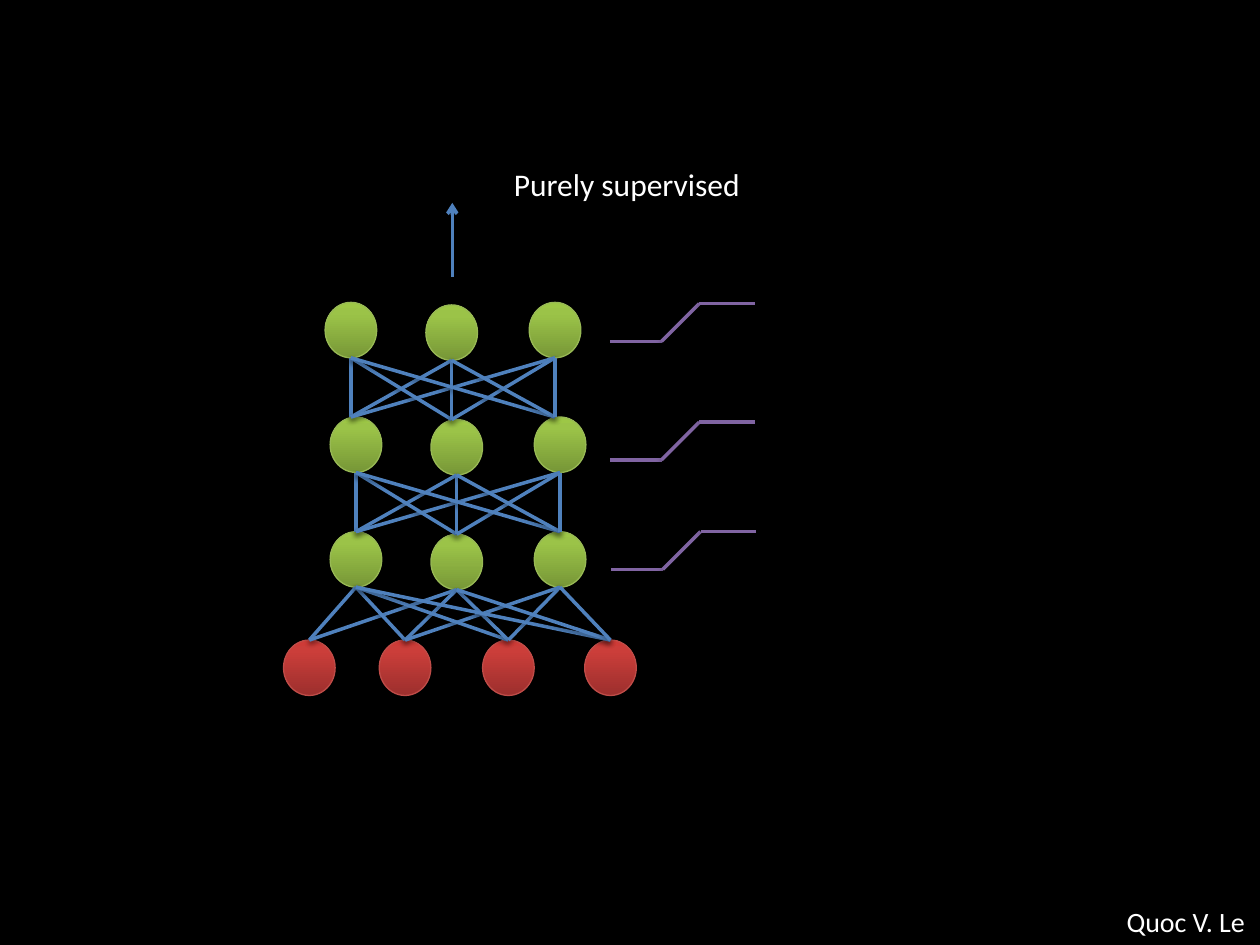
from copy import deepcopy
from itertools import product

from lxml import etree
from pptx import Presentation
from pptx import util as u
from pptx.dml import color
from pptx.enum import shapes, text
from pptx.oxml import ns

COLORS = {
    "background": "000000",
    "text": "FFFFFF",
    "link": "4F81BD",
    "step": "8064A2",
    "shadow": "000000",
}
INPUT = {"stops": ("9C2F2D", "CB3E3A", "CE3B37"), "outline": "BF4C48"}
HIDDEN = {"stops": ("779737", "9BC348", "9DC746"), "outline": "98B955"}
STOP_POSITIONS = (0, 0.8, 1)
NODE_W, NODE_H = 0.41, 0.44
HIDDEN_OFFSETS = ((0, 0), (0.8, 0.02), (1.62, 0))


def rgb(value):
    return color.RGBColor.from_string(value)


def add_shadow(part, distance, opacity):
    effects = etree.SubElement(part._element.spPr, ns.qn("a:effectLst"))
    outer = etree.SubElement(
        effects, ns.qn("a:outerShdw"), blurRad=str(u.Pt(3.1)),
        dist=str(u.Pt(distance)), dir="5400000", rotWithShape="0")
    shade = etree.SubElement(outer, ns.qn("a:srgbClr"), val=COLORS["shadow"])
    etree.SubElement(shade, ns.qn("a:alpha"), val=str(opacity * 1000))


def add_line(slide, start, end, hue):
    line = slide.shapes.add_connector(
        shapes.MSO_CONNECTOR.STRAIGHT, *(u.Inches(v) for v in (*start, *end)))
    line.line.color.rgb = rgb(hue)
    line.line.width = u.Pt(2)
    add_shadow(line, 1.6, 38)
    return line


def add_node(slide, left, top, style):
    node = slide.shapes.add_shape(
        shapes.MSO_SHAPE.OVAL, u.Inches(left), u.Inches(top),
        u.Inches(NODE_W), u.Inches(NODE_H))
    node.fill.gradient()
    node.fill.gradient_angle = 90
    stop_list = node._element.spPr.find(".//" + ns.qn("a:gsLst"))
    stop_list.append(deepcopy(stop_list[-1]))
    stops = zip(node.fill.gradient_stops, STOP_POSITIONS, style["stops"])
    for stop, position, hue in stops:
        stop.position = position
        stop.color.rgb = rgb(hue)
    node.line.color.rgb = rgb(style["outline"])
    node.line.width = u.Pt(0.75)
    add_shadow(node, 1.8, 35)


def add_layer(slide, corners, style):
    for left, top in corners:
        add_node(slide, left, top, style)


def add_links(slide, lower, upper, skipped=()):
    for (i, low), (j, high) in product(enumerate(lower), enumerate(upper)):
        if (i, j) not in skipped:
            add_line(slide, (low[0] + NODE_W / 2, low[1]),
                     (high[0] + NODE_W / 2, high[1] + NODE_H), COLORS["link"])


def add_network(slide, left, top, width, height):
    def hidden_layer(dx, dy):
        return [(left + dx + x, top + dy + y) for x, y in HIDDEN_OFFSETS]

    input_top = top + height - NODE_H
    inputs = [(left + x, input_top)
              for x in (0, 0.76, 1.58, width - NODE_W)]
    first = hidden_layer(0.37, 1.82)
    second = hidden_layer(0.37, 0.91)
    third = hidden_layer(0.33, 0)
    below_third = hidden_layer(0.33, 0.91)

    add_layer(slide, inputs, INPUT)
    add_layer(slide, first, HIDDEN)
    add_layer(slide, second, HIDDEN)
    add_links(slide, inputs, first, skipped={(0, 2)})
    add_links(slide, first, second)
    add_layer(slide, third, HIDDEN)
    add_links(slide, below_third, third)


def add_output_arrow(slide, x, bottom, top):
    arrow = add_line(slide, (x, bottom), (x, top), COLORS["link"])
    etree.SubElement(arrow.line._get_or_add_ln(), ns.qn("a:tailEnd"),
                     type="arrow")


def add_activation(slide, left, top, width, height):
    bottom = top + height
    ramp_start, ramp_end = left + 0.41, left + 0.71
    points = [(left, bottom), (ramp_start, bottom),
              (ramp_end, top), (left + width, top)]
    for start, end in zip(points, points[1:]):
        add_line(slide, start, end, COLORS["step"])


def add_label(slide, left, top, width, height, words, size, align):
    label = slide.shapes.add_textbox(
        u.Inches(left), u.Inches(top), u.Inches(width), u.Inches(height))
    frame = label.text_frame
    frame.word_wrap = False
    frame.auto_size = text.MSO_AUTO_SIZE.SHAPE_TO_FIT_TEXT
    paragraph = frame.paragraphs[0]
    paragraph.alignment = align
    run = paragraph.add_run()
    run.text = words
    run.font.name = "Calibri"
    run.font.size = u.Pt(size)
    run.font.color.rgb = rgb(COLORS["text"])


def main():
    deck = Presentation()
    deck.slide_width, deck.slide_height = u.Inches(10), u.Inches(7.5)
    slide = deck.slides.add_slide(deck.slide_layouts[6])
    slide.background.fill.solid()
    slide.background.fill.fore_color.rgb = rgb(COLORS["background"])

    add_network(slide, 2.25, 2.4, 2.8, 3.12)
    add_output_arrow(slide, 3.59, 2.2, 1.61)
    add_label(slide, 3.98, 1.26, 2.01, 0.4, "Purely supervised", 18,
              text.PP_ALIGN.LEFT)
    for left, top in ((4.85, 4.22), (4.84, 3.35), (4.84, 2.41)):
        add_activation(slide, left, top, 1.15, 0.3)
    add_label(slide, 8.82, 7.13, 1.18, 0.37, "Quoc V. Le", 16,
              text.PP_ALIGN.CENTER)

    deck.save("out.pptx")


if __name__ == "__main__":
    main()
